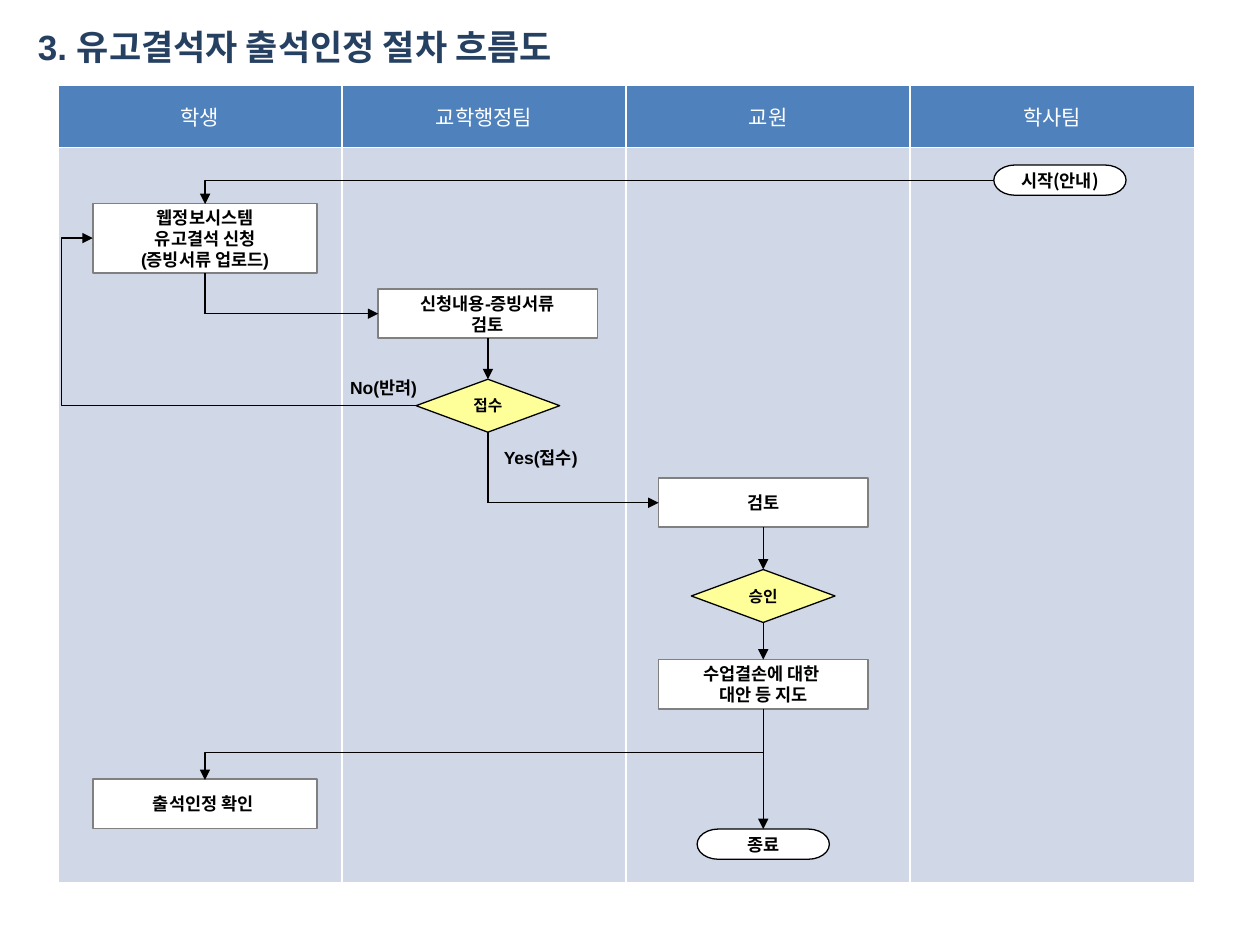
from lxml.etree import SubElement
from pptx import Presentation
from pptx.dml.color import RGBColor
from pptx.enum.shapes import MSO_CONNECTOR as Line, MSO_SHAPE as Shape
from pptx.enum.text import MSO_ANCHOR as Anchor, PP_ALIGN as Align
from pptx.oxml.ns import qn
from pptx.util import Inches, Pt

WHITE = RGBColor(0xFF, 0xFF, 0xFF)
BLACK = RGBColor(0x00, 0x00, 0x00)
GREY = RGBColor(0x80, 0x80, 0x80)
NAVY = RGBColor(0x25, 0x40, 0x61)
BLUE = RGBColor(0x4F, 0x81, 0xBD)
PALE_BLUE = RGBColor(0xD0, 0xD8, 0xE8)
YELLOW = RGBColor(0xFF, 0xFF, 0x99)
LATIN, KOREAN = "Arial", "Noto Sans CJK KR"

# Grid: four lanes, each with the centre line of its steps
LANES = ["학생", "교학행정팀", "교원", "학사팀"]
LEFT, TOP, LANE_WIDTH = 0.46, 0.68, 2.255
HEAD_HEIGHT, BODY_HEIGHT = 0.49, 5.84
SHIFTS = [0.04, 0.03, -0.04, 0.06]
CENTRES = [LEFT + LANE_WIDTH * (lane + 0.5) + shift for lane, shift in enumerate(SHIFTS)]
STUDENT, OFFICE, TEACHER, AFFAIRS = range(4)

deck = Presentation()
deck.slide_width, deck.slide_height = Inches(10), Inches(7.5)
page = deck.slides.add_slide(deck.slide_layouts[5])


def write(frame, text, size, font, color=BLACK, bold=True, align=Align.CENTER):
    frame.text = text
    for para in frame.paragraphs:
        para.alignment = align
        for span in para.runs:
            span.font.size, span.font.name = Pt(size), font
            span.font.bold, span.font.color.rgb = bold, color


def link(start, end, kind=Line.STRAIGHT, weight=0.75, arrow=True):
    """Draw a line; each end is a point in inches or a (step, side) pair."""
    glued = [isinstance(stop[0], str) for stop in (start, end)]
    points = [(0, 0) if glue else stop for glue, stop in zip(glued, (start, end))]
    line = page.shapes.add_connector(kind, *[Inches(v) for point in points for v in point])
    if glued[0]:
        line.begin_connect(steps[start[0]], start[1])
    if glued[1]:
        line.end_connect(steps[end[0]], end[1])
    line.line.color.rgb, line.line.width = BLACK, Pt(weight)
    if arrow:
        SubElement(line.line._get_or_add_ln(), qn("a:tailEnd"), type="triangle")
    SubElement(line._element.spPr, qn("a:effectLst"))
    return line


# Title
title = page.shapes.title
title.left, title.top, title.width, title.height = [Inches(v) for v in (0.2, 0.14, 4.96, 0.45)]
title.text_frame.vertical_anchor = Anchor.MIDDLE
title.text_frame.word_wrap = False
write(title.text_frame, "3. 유고결석자 출석인정 절차 흐름도", 20, LATIN, NAVY, align=Align.LEFT)

# Lanes
table = page.shapes.add_table(2, len(LANES), Inches(LEFT), Inches(TOP), Inches(LANE_WIDTH * 4),
                              Inches(HEAD_HEIGHT + BODY_HEIGHT)).table
table.rows[0].height, table.rows[1].height = Inches(HEAD_HEIGHT), Inches(BODY_HEIGHT)
for lane, name in enumerate(LANES):
    for row, color in enumerate((BLUE, PALE_BLUE)):
        cell = table.cell(row, lane)
        cell.fill.solid()
        cell.fill.fore_color.rgb = color
    head = table.cell(0, lane)
    head.vertical_anchor = Anchor.MIDDLE
    write(head.text_frame, name, 12, KOREAN, WHITE, bold=False)

# Steps: look of each kind, then name, kind, lane, middle, width, height, text
KINDS = {
    "task": (Shape.RECTANGLE, WHITE, GREY, 1, 10, LATIN),
    "decision": (Shape.FLOWCHART_DECISION, YELLOW, BLACK, 0.75, 9, LATIN),
    "terminal": (Shape.FLOWCHART_TERMINATOR, WHITE, BLACK, 0.75, 10, KOREAN),
}
STEPS = [
    ("start", "terminal", AFFAIRS, 1.43, 1.05, 0.24, "시작(안내)"),
    ("apply", "task", STUDENT, 1.89, 1.78, 0.55, "웹정보시스템\n유고결석 신청\n(증빙서류 업로드)"),
    ("check", "task", OFFICE, 2.49, 1.74, 0.39, "신청내용-증빙서류\n검토"),
    ("receive", "decision", OFFICE, 3.22, 1.14, 0.42, "접수"),
    ("review", "task", TEACHER, 3.99, 1.66, 0.39, "검토"),
    ("approve", "decision", TEACHER, 4.73, 1.14, 0.42, "승인"),
    ("guide", "task", TEACHER, 5.43, 1.66, 0.39, "수업결손에 대한 \n대안 등 지도"),
    ("confirm", "task", STUDENT, 6.38, 1.78, 0.39, "출석인정 확인 "),
    ("finish", "terminal", TEACHER, 6.7, 1.05, 0.24, "종료"),
]
steps = {}
for name, kind, lane, middle, width, height, text in STEPS:
    outline, fill, edge, weight, size, font = KINDS[kind]
    box = page.shapes.add_shape(outline, Inches(CENTRES[lane] - width / 2),
                                Inches(middle - height / 2), Inches(width), Inches(height))
    box.shadow.inherit = False
    box.fill.solid()
    box.fill.fore_color.rgb = fill
    box.line.color.rgb, box.line.width = edge, Pt(weight)
    frame = box.text_frame
    frame.margin_left = frame.margin_right = frame.margin_top = frame.margin_bottom = 0
    frame.vertical_anchor = Anchor.MIDDLE
    frame.word_wrap = kind == "task"
    write(frame, text, size, font)
    steps[name] = box

# Straight arrows down a lane
for above, below in [("check", "receive"), ("review", "approve"),
                     ("approve", "guide"), ("guide", "finish")]:
    link((above, 2), (below, 0))

# Down and then right into the next lane
for source, target, lane, middle in [("apply", "check", STUDENT, 2.49),
                                     ("receive", "review", OFFICE, 3.99)]:
    corner = (CENTRES[lane], middle)
    link((source, 2), corner, weight=1, arrow=False)
    link(corner, (target, 1))

# Left and then down to the student
for start, end in [((CENTRES[AFFAIRS] - 0.52, 1.43), (CENTRES[STUDENT], 1.62)),
                   ((CENTRES[TEACHER], 5.97), (CENTRES[STUDENT], 6.19))]:
    bend = link(start, end, Line.ELBOW)
    bend._element.spPr.prstGeom.set("prst", "bentConnector2")

# Rejection loops back around the left of the application
loop = link((CENTRES[OFFICE] - 0.57, 3.22), (CENTRES[STUDENT] - 0.89, 1.89), Line.ELBOW)
SubElement(loop._element.spPr.prstGeom.get_or_add_avLst(), qn("a:gd"),
           name="adj1", fmla="val 109700")

# Branch labels
for text, left, top, width in [("No(반려)", 2.68, 2.94, 0.75), ("Yes(접수)", 3.9, 3.5, 0.79)]:
    label = page.shapes.add_textbox(Inches(left), Inches(top), Inches(width), Inches(0.27))
    label.text_frame.word_wrap = True
    write(label.text_frame, text, 10, LATIN, align=Align.LEFT)

deck.save("out.pptx")
